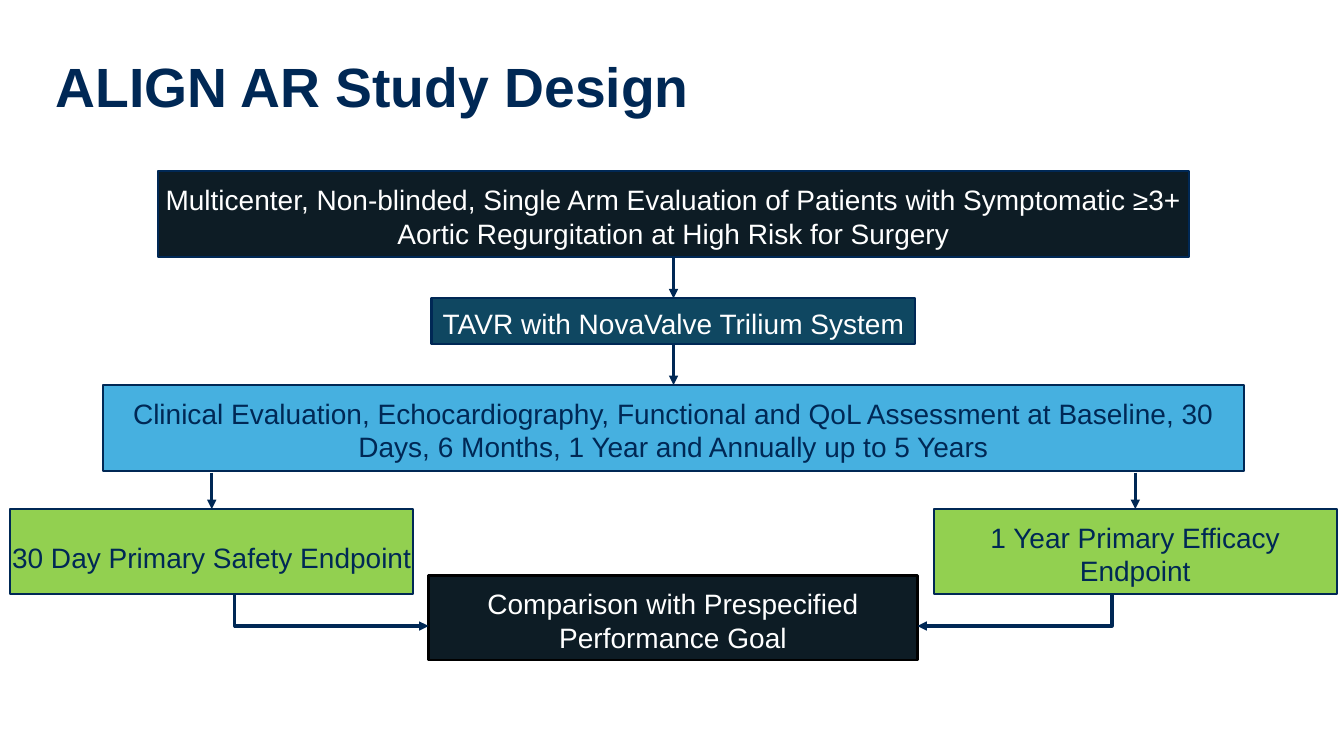
"""Build the ALIGN AR study design flowchart slide."""
from lxml import etree
from pptx import Presentation
from pptx import util as u
from pptx.dml.color import RGBColor
from pptx.enum import shapes, text
from pptx.oxml import ns

HUES = {"navy": "002855", "ink": "0D1C25", "teal": "0F4761", "sky": "46B0E0",
        "lime": "92D050", "white": "FFFFFF", "black": "000000"}
FONT = "Arial"


def hue(name):
    """Return the named colour."""
    return RGBColor.from_string(HUES[name])


def write(shape, words, size, color, align, top, side, bold=False):
    """Put one styled paragraph into a shape, anchored at its top."""
    frame = shape.text_frame
    frame.word_wrap = True
    frame.vertical_anchor = text.MSO_ANCHOR.TOP
    frame.margin_top = u.Inches(top)
    frame.margin_left = frame.margin_right = u.Inches(side)
    frame.margin_bottom = 0
    para = frame.paragraphs[0]
    para.text = words
    para.alignment = align
    font = para.font
    font.name, font.size, font.bold = FONT, u.Pt(size), bold
    font.color.rgb = hue(color)


def box(slide, words, area, fill, color, edge="navy", top=0.11, side=0.03):
    """Add a filled, outlined step of the flow."""
    step = slide.shapes.add_shape(shapes.MSO_SHAPE.RECTANGLE,
                                  *(u.Inches(n) for n in area))
    step.shadow.inherit = False
    step.fill.solid()
    step.fill.fore_color.rgb = hue(fill)
    step.line.color.rgb = hue(edge)
    step.line.width = u.Pt(1.5)
    write(step, words, 20, color, text.PP_ALIGN.CENTER, top, side)
    return step


def point(line):
    """Style a line as a navy arrow with its head at the end."""
    line.line.color.rgb = hue("navy")
    line.line.width = u.Pt(2.25)
    etree.SubElement(line.line._get_or_add_ln(), ns.qn("a:tailEnd"), type="triangle")


def drop(slide, goal, start=None, gap=0.36):
    """Point an arrow down to the top of a step, from a step or a gap above."""
    x = goal.left + goal.width // 2
    line = slide.shapes.add_connector(shapes.MSO_CONNECTOR.STRAIGHT,
                                      x, goal.top - u.Inches(gap), x, goal.top)
    if start is not None:
        line.begin_connect(start, 2)
    line.end_connect(goal, 0)
    point(line)
    etree.SubElement(line._element.spPr, ns.qn("a:effectLst"))


def bend(slide, x, y, tip, level):
    """Draw an arrow that goes down to a level, then across to its tip."""
    x, y, tip, level = (u.Inches(n) for n in (x, y, tip, level))
    pen = slide.shapes.build_freeform(x, y)
    pen.add_line_segments([(x, level), (tip, level)], close=False)
    line = pen.convert_to_shape()
    line.shadow.inherit = False
    line.fill.background()
    point(line)


def head(slide, area):
    """Add the slide title."""
    title = slide.shapes.add_textbox(*(u.Inches(n) for n in area))
    write(title, "ALIGN AR Study Design", 39.5, "navy", text.PP_ALIGN.LEFT,
          0.02, 0.01, bold=True)


def chain(slide, mid, top):
    """Stack the three study steps about a centre line and join them."""
    steps = [
        ("Multicenter, Non-blinded, Single Arm Evaluation of Patients with "
         "Symptomatic ≥3+ Aortic Regurgitation at High Risk for Surgery",
         0, 10.22, 0.85, "ink", "white", 0.11),
        ("TAVR with NovaValve Trilium System", 1.26, 4.8, 0.45, "teal", "white", 0.08),
        ("Clinical Evaluation, Echocardiography, Functional and QoL Assessment at "
         "Baseline, 30 Days, 6 Months, 1 Year and Annually up to 5 Years",
         2.12, 11.32, 0.85, "sky", "navy", 0.11),
    ]
    last = None
    for words, down, width, height, fill, color, inset in steps:
        area = (mid - width / 2, top + down, width, height)
        step = box(slide, words, area, fill, color, top=inset)
        if last is not None:
            drop(slide, step, last)
        last = step


def ends(slide, left, top, width):
    """Place both endpoints and lead them to the comparison."""
    wide, tall, core = 4, 0.84, 4.85
    right = left + width
    near = left + 4.15
    level = top + 1.16
    box(slide, "Comparison with Prespecified Performance Goal",
        (near, top + 0.66, core, tall), "ink", "white", edge="black")
    sides = [
        ("30 Day Primary Safety Endpoint", left, 0.31, left + 2.23, near),
        ("1 Year Primary Efficacy Endpoint", right - wide, 0.11,
         right - 2.23, near + core),
    ]
    for words, x, inset, start, tip in sides:
        goal = box(slide, words, (x, top, wide, tall), "lime", "navy",
                   top=inset, side=0)
        drop(slide, goal)
        bend(slide, start, top + tall, tip, level)


def main():
    """Build and save the slide."""
    deck = Presentation()
    deck.slide_width, deck.slide_height = u.Inches(13.33), u.Inches(7.5)
    slide = deck.slides.add_slide(deck.slide_layouts[6])
    head(slide, (0.54, 0.5, 6.6, 0.69))
    chain(slide, 6.68, 1.7)
    ends(slide, 0.1, 5.05, 13.16)
    deck.save("out.pptx")


if __name__ == "__main__":
    main()
